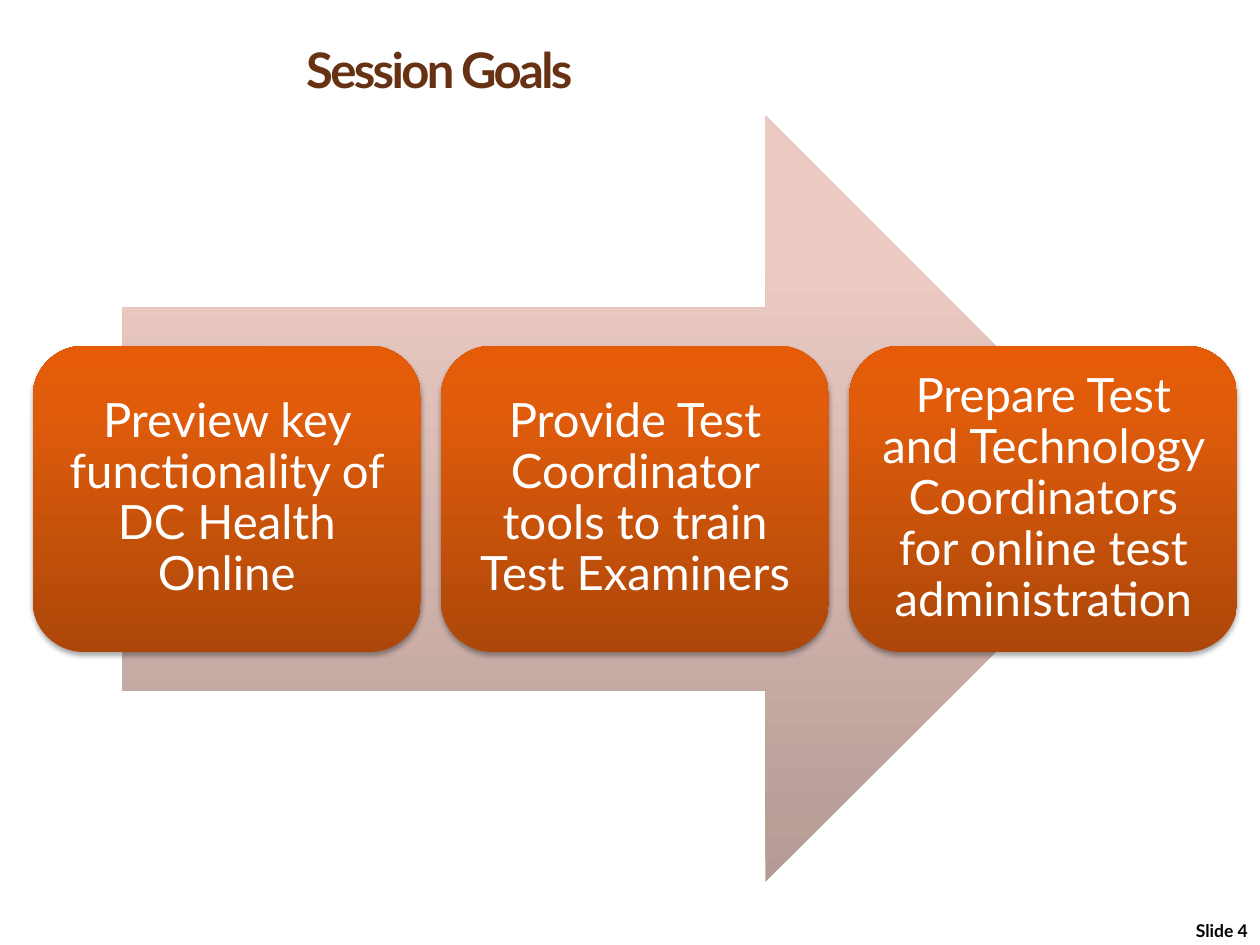
from copy import deepcopy

from lxml import etree
from pptx import Presentation
from pptx.dml.color import RGBColor
from pptx.enum.shapes import MSO_SHAPE
from pptx.enum.text import MSO_ANCHOR, MSO_AUTO_SIZE, PP_ALIGN
from pptx.oxml import parse_xml
from pptx.oxml.ns import nsdecls, qn
from pptx.util import Inches, Pt

RIGHT_ARROW = MSO_SHAPE.RIGHT_ARROW
ROUNDED_RECTANGLE = MSO_SHAPE.ROUNDED_RECTANGLE
MIDDLE, BOTTOM = MSO_ANCHOR.MIDDLE, MSO_ANCHOR.BOTTOM
LEFT, CENTER, RIGHT = PP_ALIGN.LEFT, PP_ALIGN.CENTER, PP_ALIGN.RIGHT
NO_AUTOFIT = MSO_AUTO_SIZE.NONE

FONT = "Lato"
WHITE = RGBColor(0xFF, 0xFF, 0xFF)
BLACK = RGBColor(0x00, 0x00, 0x00)
BROWN = RGBColor(0x67, 0x32, 0x13)
STOP_POSITIONS = (0, 0.8, 1)
ARROW_COLORS = (
    RGBColor(0xB4, 0x9B, 0x95),
    RGBColor(0xEA, 0xCA, 0xC2),
    RGBColor(0xEC, 0xCA, 0xC2),
)
GOAL_COLORS = (
    RGBColor(0xAD, 0x47, 0x09),
    RGBColor(0xE0, 0x5C, 0x0B),
    RGBColor(0xE5, 0x5B, 0x07),
)
GOALS = (
    "Preview key functionality of DC Health Online",
    "Provide Test Coordinator tools to train Test Examiners",
    "Prepare Test and Technology Coordinators for online test administration",
)


def write_text(shape, text, size, color, alignment, bold=False):
    shape.text_frame.word_wrap = True
    paragraph = shape.text_frame.paragraphs[0]
    paragraph.text = text
    paragraph.alignment = alignment
    font = paragraph.font
    font.name, font.size, font.bold = FONT, Pt(size), bold
    font.color.rgb = color
    return paragraph


def fill_upward(shape, colors):
    shape.fill.gradient()
    shape.fill.gradient_angle = 90
    stop_list = shape._element.spPr.find(".//" + qn("a:gsLst"))
    stop_list.append(deepcopy(stop_list[-1]))
    for stop, position, color in zip(shape.fill.gradient_stops, STOP_POSITIONS, colors):
        stop.position = position
        stop.color.rgb = color


def add_gradient_shape(slide, kind, left, top, width, height, colors):
    shape = slide.shapes.add_shape(kind, left, top, width, height)
    shape.shadow.inherit = False
    shape.line.fill.background()
    fill_upward(shape, colors)
    return shape


def add_soft_shadow(shape):
    effects = shape._element.spPr.find(qn("a:effectLst"))
    effects.append(parse_xml(
        f'<a:outerShdw {nsdecls("a")} blurRad="{Pt(3.1)}" dist="{Pt(1.8)}" '
        'dir="5400000" rotWithShape="0"><a:srgbClr val="000000">'
        '<a:alpha val="35000"/></a:srgbClr></a:outerShdw>'
    ))


def add_goal(slide, text, left, top, width, height):
    card = add_gradient_shape(
        slide, ROUNDED_RECTANGLE, left, top, width, height, GOAL_COLORS)
    add_soft_shadow(card)
    frame = card.text_frame
    frame.vertical_anchor = MIDDLE
    frame.margin_left = frame.margin_right = Inches(0.11)
    frame.margin_top = frame.margin_bottom = Inches(0.11)
    paragraph = write_text(card, text, 27, WHITE, CENTER)
    paragraph.line_spacing = 0.9


def add_goal_process(slide, left, top, width, height):
    arrow_width = Inches(8.15)
    arrow_left = left + (width - arrow_width) // 2
    add_gradient_shape(
        slide, RIGHT_ARROW, arrow_left, top, arrow_width, height, ARROW_COLORS)
    gap = Inches(0.16)
    card_width = (width - gap * (len(GOALS) - 1)) // len(GOALS)
    card_height = Inches(2.43)
    card_top = top + (height - card_height) // 2
    for index, goal in enumerate(GOALS):
        card_left = left + index * (card_width + gap)
        add_goal(slide, goal, card_left, card_top, card_width, card_height)


def place_title(slide, left, top, width, height):
    title = slide.shapes.title
    title.left, title.top, title.width, title.height = left, top, width, height
    title.text_frame.auto_size = NO_AUTOFIT
    title.text_frame.vertical_anchor = BOTTOM
    paragraph = write_text(title, "Session Goals", 28, BROWN, LEFT, bold=True)
    paragraph.runs[0].font._element.set("spc", "-150")


def add_slide_label(slide, left, top, width, height):
    label = slide.shapes.add_textbox(left, top, width, height)
    write_text(label, "Slide 4", 10, BLACK, RIGHT, bold=True)
    label.text_frame.margin_right = Inches(0.1)


def main():
    presentation = Presentation()
    presentation.slide_width, presentation.slide_height = Inches(10), Inches(7.5)
    slide = presentation.slides.add_slide(presentation.slide_layouts[5])
    add_goal_process(slide, Inches(0.26), Inches(0.92), Inches(9.56), Inches(6.08))
    add_slide_label(slide, Inches(9.25), Inches(7.25), Inches(0.75), Inches(0.25))
    place_title(slide, Inches(2.33), Inches(0), Inches(7.67), Inches(0.83))
    presentation.save("out.pptx")


if __name__ == "__main__":
    main()
